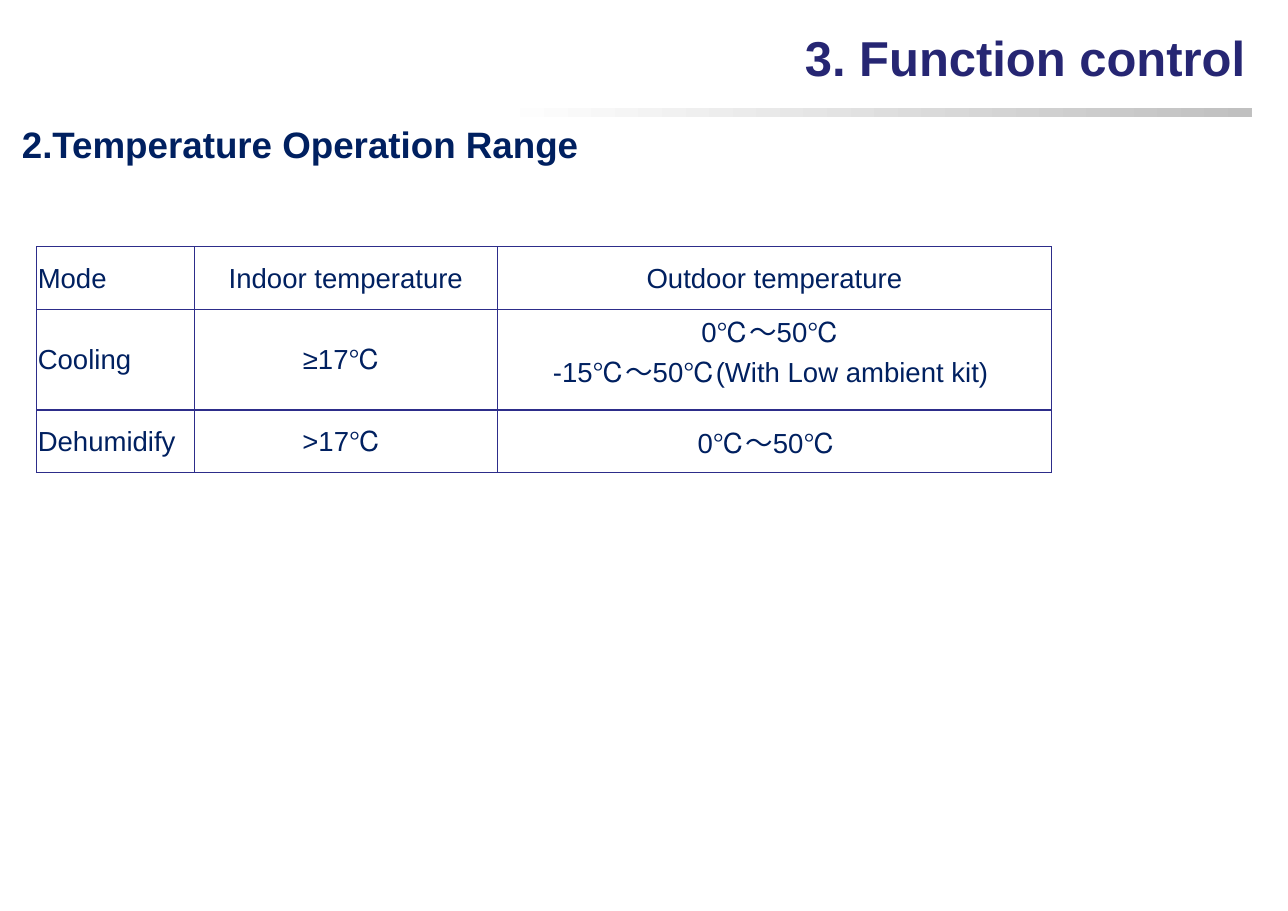
from pptx import Presentation
from pptx.dml.color import RGBColor
from pptx.enum.shapes import MSO_SHAPE
from pptx.enum.text import MSO_ANCHOR, PP_ALIGN
from pptx.oxml import parse_xml
from pptx.oxml.ns import nsdecls
from pptx.util import Pt

THEME = {
    "title": {"name": "Arial", "size": Pt(32), "bold": True, "color": "262673"},
    "heading": {"name": "Arial", "size": Pt(24), "bold": True, "color": "002060"},
    "cell": {"name": "Arial", "size": Pt(18), "bold": False, "color": "002060"},
    "border": "2D2D8A",
    "bar": ("FFFFFF", "C0C0C0"),
}


def write(para, text, style, align):
    para.alignment = align
    span = para.add_run()
    span.text = text
    for key, value in style.items():
        if key == "color":
            span.font.color.rgb = RGBColor.from_string(value)
        else:
            setattr(span.font, key, value)


deck = Presentation()
deck.slide_width, deck.slide_height = Pt(841.7), Pt(595.4)
page = deck.slides.add_slide(deck.slide_layouts[5])

bar = page.shapes.add_shape(
    MSO_SHAPE.RECTANGLE, Pt(324.7), Pt(70.6), Pt(493.2), Pt(5.8))
bar.shadow.inherit = False
bar.line.fill.background()
bar.fill.gradient()
bar.fill.gradient_angle = 0
for stop, color in zip(bar.fill.gradient_stops, THEME["bar"]):
    stop.color.rgb = RGBColor.from_string(color)

title = page.shapes.title
title.left, title.top, title.width, title.height = Pt(517), Pt(14.4), Pt(304.5), Pt(46)
title.text_frame.word_wrap = False
title.text_frame.vertical_anchor = MSO_ANCHOR.MIDDLE
write(title.text_frame.paragraphs[0], "3. Function control", THEME["title"], PP_ALIGN.RIGHT)

heading = page.shapes.add_textbox(Pt(7.2), Pt(76.3), Pt(527), Pt(64))
heading.text_frame.word_wrap = True
heading_para = heading.text_frame.paragraphs[0]
heading_para.line_spacing = Pt(28.4)
write(heading_para, "2.Temperature Operation Range", THEME["heading"], PP_ALIGN.LEFT)

rows = [
    ["Mode", "Indoor temperature", "Outdoor temperature"],
    ["Cooling", "≥17℃", "0℃～50℃\n-15℃～50℃(With Low ambient kit)"],
    ["Dehumidify", ">17℃", "0℃～50℃"],
]
column_widths = [103, 198, 362.2]
row_heights = [41, 65.6, 41]
right_margins = [[0.7, 0.7, 0.7], [0.7, 5.7, 5.7], [0.7, 5.7, 10.7]]

frame = page.shapes.add_table(
    len(rows), len(column_widths), Pt(24), Pt(161.3),
    Pt(sum(column_widths)), Pt(sum(row_heights)))
table = frame.table
table.first_row = table.horz_banding = False
for column, width in zip(table.columns, column_widths):
    column.width = Pt(width)
for row, height in zip(table.rows, row_heights):
    row.height = Pt(height)

for r, texts in enumerate(rows):
    for c, text in enumerate(texts):
        cell = table.cell(r, c)
        lines = text.split("\n")
        layout = {
            "margin_left": Pt(0.7),
            "margin_right": Pt(right_margins[r][c]),
            "margin_top": Pt(0.7),
            "margin_bottom": Pt(0),
            "vertical_anchor": MSO_ANCHOR.TOP if len(lines) > 1 else MSO_ANCHOR.MIDDLE,
        }
        for key, value in layout.items():
            setattr(cell, key, value)
        properties = cell._tc.get_or_add_tcPr()
        for side in ("lnL", "lnR", "lnT", "lnB"):
            properties.append(parse_xml(
                f'<a:{side} {nsdecls("a")} w="{Pt(1)}"><a:solidFill>'
                f'<a:srgbClr val="{THEME["border"]}"/></a:solidFill></a:{side}>'))
        cell.fill.background()
        for i, line in enumerate(lines):
            para = cell.text_frame.add_paragraph() if i else cell.text_frame.paragraphs[0]
            write(para, line, THEME["cell"], PP_ALIGN.CENTER if c else PP_ALIGN.LEFT)

deck.save("out.pptx")
